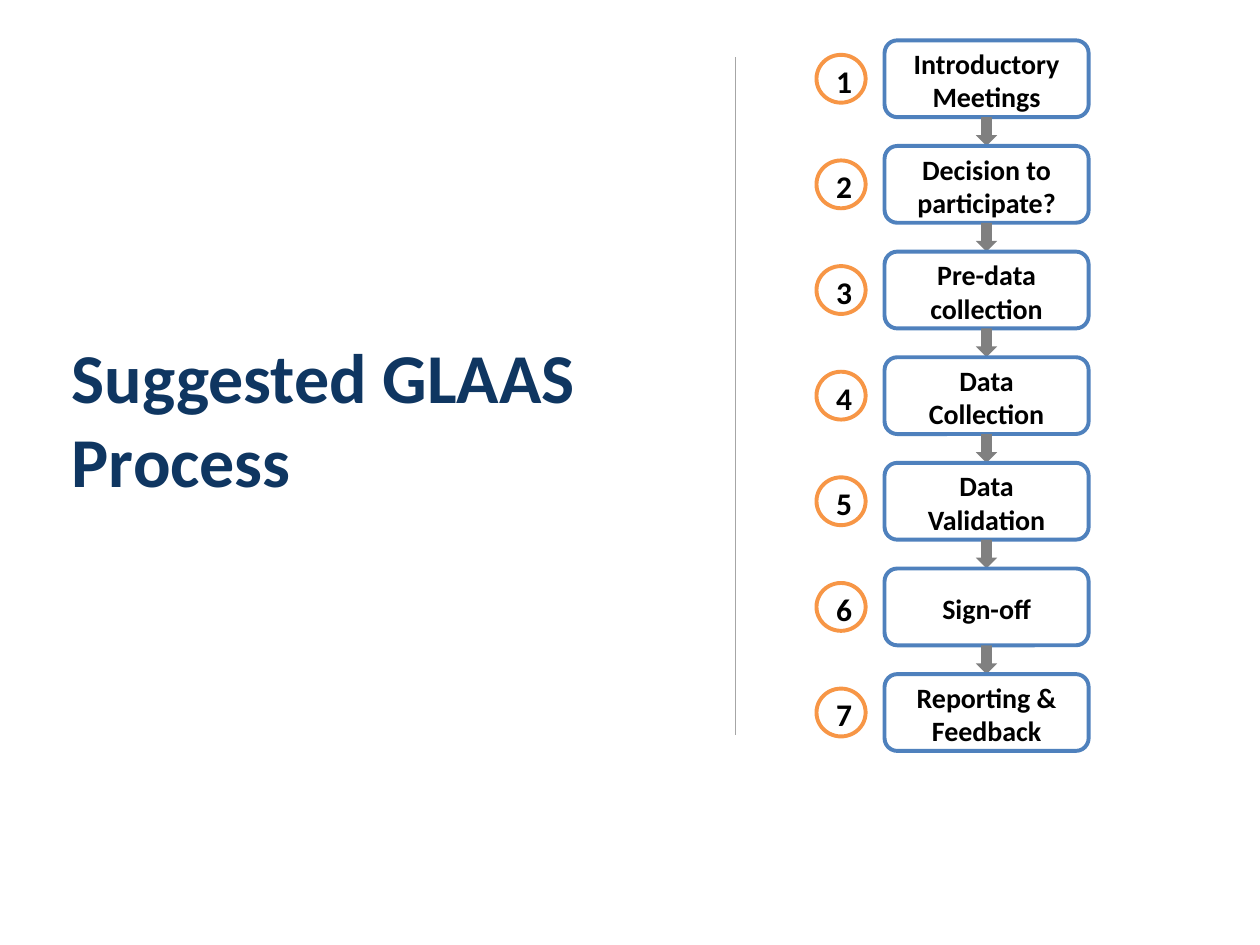
from lxml import etree
from pptx import Presentation
from pptx.dml.color import RGBColor
from pptx.enum.shapes import MSO_CONNECTOR, MSO_SHAPE
from pptx.enum.text import MSO_ANCHOR, PP_ALIGN
from pptx.oxml.ns import qn
from pptx.util import Inches, Pt

ROUNDED = MSO_SHAPE.ROUNDED_RECTANGLE
OVAL = MSO_SHAPE.OVAL
DOWN_ARROW = MSO_SHAPE.DOWN_ARROW
STRAIGHT = MSO_CONNECTOR.STRAIGHT
MIDDLE = MSO_ANCHOR.MIDDLE
LEFT, CENTER = PP_ALIGN.LEFT, PP_ALIGN.CENTER

FONT = "Calibri"
NAVY, BLUE, ORANGE = "0F3661", "4F81BD", "F79646"
GREY, RULE, BLACK, WHITE = "808080", "A6A6A6", "000000", "FFFFFF"

STEPS = [
    "Introductory Meetings",
    "Decision to participate?",
    "Pre-data collection",
    "Data Collection",
    "Data Validation",
    "Sign-off",
    "Reporting & Feedback",
]


def rgb(value):
    return RGBColor.from_string(value)


def set_text(shape, text, size, color, align):
    tf = shape.text_frame
    tf.text = text
    tf.word_wrap = True
    tf.vertical_anchor = MIDDLE
    p = tf.paragraphs[0]
    p.alignment = align
    font = p.runs[0].font
    font.name, font.size, font.bold = FONT, Pt(size), True
    font.color.rgb = rgb(color)


def add_filled(slide, kind, x, y, w, h, fill, outline=None):
    shape = slide.shapes.add_shape(kind, Inches(x), Inches(y), Inches(w), Inches(h))
    shape.shadow.inherit = False
    shape.fill.solid()
    shape.fill.fore_color.rgb = rgb(fill)
    if outline:
        shape.line.color.rgb = rgb(outline)
        shape.line.width = Pt(2.25)
    else:
        shape.line.fill.background()
    return shape


def add_label(slide, kind, x, y, w, h, outline, text, size, insets):
    shape = add_filled(slide, kind, x, y, w, h, WHITE, outline)
    set_text(shape, text, size, BLACK, CENTER)
    tf = shape.text_frame
    tf.margin_left, tf.margin_top, tf.margin_right, tf.margin_bottom = map(Inches, insets)


def add_title(slide, x, y, w, h):
    title = slide.shapes.title
    title.left, title.top = Inches(x), Inches(y)
    title.width, title.height = Inches(w), Inches(h)
    set_text(title, "Suggested GLAAS Process", 40, NAVY, LEFT)


def add_divider(slide, x, top, bottom):
    line = slide.shapes.add_connector(
        STRAIGHT, Inches(x), Inches(bottom), Inches(x), Inches(top))
    line.line.color.rgb = rgb(RULE)
    line.line.width = Pt(0.75)
    etree.SubElement(line._element.spPr, qn("a:effectLst"))


def add_process(slide, x, y, w, h):
    box_w, box_h = 1.62, 0.61
    badge_w, badge_h = 0.39, 0.38
    arrow_w = 0.17
    pitch = (h - box_h) / (len(STEPS) - 1)
    box_x = x + w - box_w
    arrow_x = box_x + (box_w - arrow_w) / 2
    for i, step in enumerate(STEPS):
        top = y + i * pitch
        add_label(slide, ROUNDED, box_x, top, box_w, box_h, BLUE,
                  step, 16, (0.15, 0.02, 0.15, 0))
        add_label(slide, OVAL, x, top + (box_h - badge_h) / 2, badge_w, badge_h, ORANGE,
                  str(i + 1), 18, (0.05, 0.03, 0, 0))
        if i < len(STEPS) - 1:
            add_filled(slide, DOWN_ARROW, arrow_x, top + box_h,
                       arrow_w, pitch - box_h, GREY)


def main():
    prs = Presentation()
    prs.slide_width, prs.slide_height = Inches(10), Inches(7.5)
    slide = prs.slides.add_slide(prs.slide_layouts[5])
    add_title(slide, 0.47, 2.18, 5.22, 2.27)
    add_divider(slide, 5.84, 0.45, 5.83)
    add_process(slide, 6.48, 0.32, 2.16, 5.64)
    prs.save("out.pptx")


if __name__ == "__main__":
    main()
